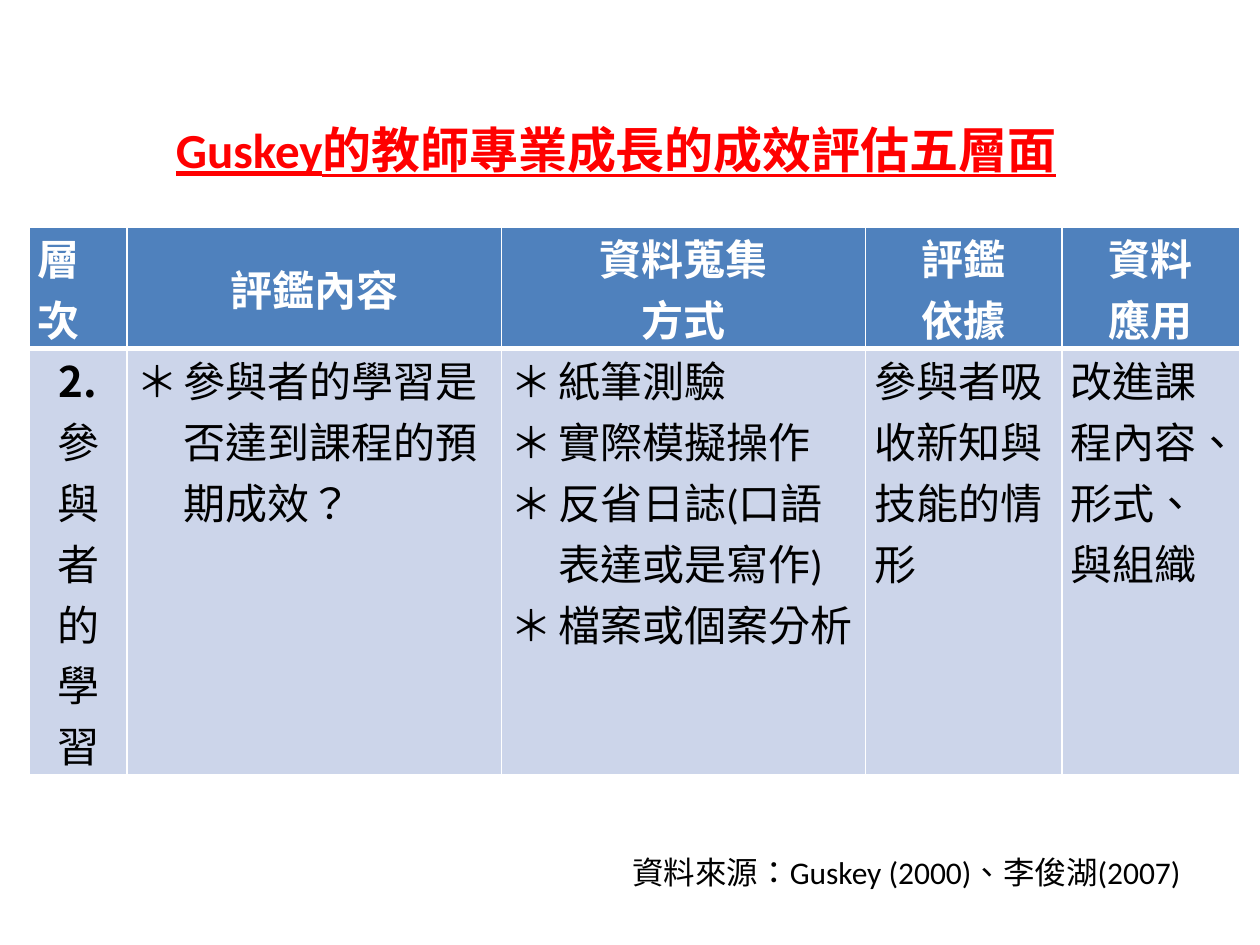
from lxml import etree
from pptx import Presentation
from pptx.dml.color import RGBColor
from pptx.enum import lang, text
from pptx.oxml.ns import qn
from pptx.util import Inches, Pt

RED = RGBColor(0xFF, 0x00, 0x00)
WHITE = RGBColor(0xFF, 0xFF, 0xFF)
BLACK = RGBColor(0x00, 0x00, 0x00)
HEADER_BLUE = RGBColor(0x4F, 0x81, 0xBD)
BODY_BLUE = RGBColor(0xCC, 0xD5, 0xEA)

CJK_FONT = "Noto Sans CJK SC"
COLUMN_WIDTHS = [0.78, 2.97, 2.89, 1.56, 1.41]
ROW_HEIGHTS = [0.64, 3.18]
ROWS = [
    [["層次"], ["評鑑內容"], ["資料蒐集", "方式"], ["評鑑", "依據"], ["資料", "應用"]],
    [
        ["2.", "參與者", "的學習"],
        ["參與者的學習是否達到課程的預期成效？"],
        ["紙筆測驗", "實際模擬操作", "反省日誌(口語表達或是寫作)", "檔案或個案分析"],
        ["參與者吸收新知與技能的情形"],
        ["改進課程內容、形式、與組織"],
    ],
]


def add_run(paragraph, words, size, color, bold=False, font="Calibri"):
    run = paragraph.add_run()
    run.text = words
    run.font.name = font
    run.font.size = Pt(size)
    run.font.bold = bold
    run.font.color.rgb = color
    run.font.language_id = lang.MSO_LANGUAGE_ID.TRADITIONAL_CHINESE
    return run


def add_border(cell, side, width):
    """Draw a white line on one side (L, R, T or B) of a cell."""
    line = etree.SubElement(cell._tc.get_or_add_tcPr(), qn(f"a:ln{side}"), w=str(Pt(width)))
    fill = etree.SubElement(line, qn("a:solidFill"))
    etree.SubElement(fill, qn("a:srgbClr"), val=str(WHITE))


presentation = Presentation()
presentation.slide_width = Inches(10)
presentation.slide_height = Inches(7.5)
slide = presentation.slides.add_slide(presentation.slide_layouts[5])

title = slide.shapes.title
title.left, title.top = Inches(0.39), Inches(0.86)
title.width, title.height = Inches(9), Inches(0.64)
title.text_frame.vertical_anchor = text.MSO_ANCHOR.MIDDLE
title_paragraph = title.text_frame.paragraphs[0]
title_paragraph.alignment = text.PP_ALIGN.CENTER
add_run(title_paragraph, "Guskey的教師專業成長的成效評估五層面", 28, RED, True).font.underline = True

table = slide.shapes.add_table(
    len(ROWS), len(COLUMN_WIDTHS), Inches(0.23), Inches(1.8),
    Inches(sum(COLUMN_WIDTHS)), Inches(sum(ROW_HEIGHTS)),
).table
for column, width in zip(table.columns, COLUMN_WIDTHS):
    column.width = Inches(width)
for row, height in zip(table.rows, ROW_HEIGHTS):
    row.height = Inches(height)

for row_index, cells in enumerate(ROWS):
    header = row_index == 0
    for column_index, lines in enumerate(cells):
        cell = table.cell(row_index, column_index)
        cell.margin_left = cell.margin_right = Inches(0.07)
        cell.margin_top = cell.margin_bottom = 0
        if header and column_index in (1, 2):
            cell.vertical_anchor = text.MSO_ANCHOR.MIDDLE
        for side, width in (("L", 1), ("R", 1), ("T", 1 if header else 3), ("B", 3 if header else 1)):
            add_border(cell, side, width)
        cell.fill.solid()
        cell.fill.fore_color.rgb = HEADER_BLUE if header else BODY_BLUE

        for line_index, words in enumerate(lines):
            frame = cell.text_frame
            paragraph = frame.add_paragraph() if line_index else frame.paragraphs[0]
            if header != (column_index == 0):
                paragraph.alignment = text.PP_ALIGN.CENTER
            level_number = words == "2."
            add_run(paragraph, words, 24, WHITE if header else BLACK, header or level_number,
                    CJK_FONT if level_number else "Calibri")
            if not header and column_index in (1, 2):
                properties = paragraph._p.get_or_add_pPr()
                properties.set("marL", str(Inches(0.38)))
                properties.set("indent", str(Inches(-0.38)))
                etree.SubElement(properties, qn("a:buFont"), typeface=CJK_FONT)
                etree.SubElement(properties, qn("a:buChar"), char="＊")

source = slide.shapes.add_textbox(Inches(4.92), Inches(6.72), Inches(4.6), Inches(0.4))
source.text_frame.word_wrap = True
add_run(source.text_frame.paragraphs[0], "資料來源：Guskey (2000)、李俊湖(2007)", 18, BLACK)

presentation.save("out.pptx")
